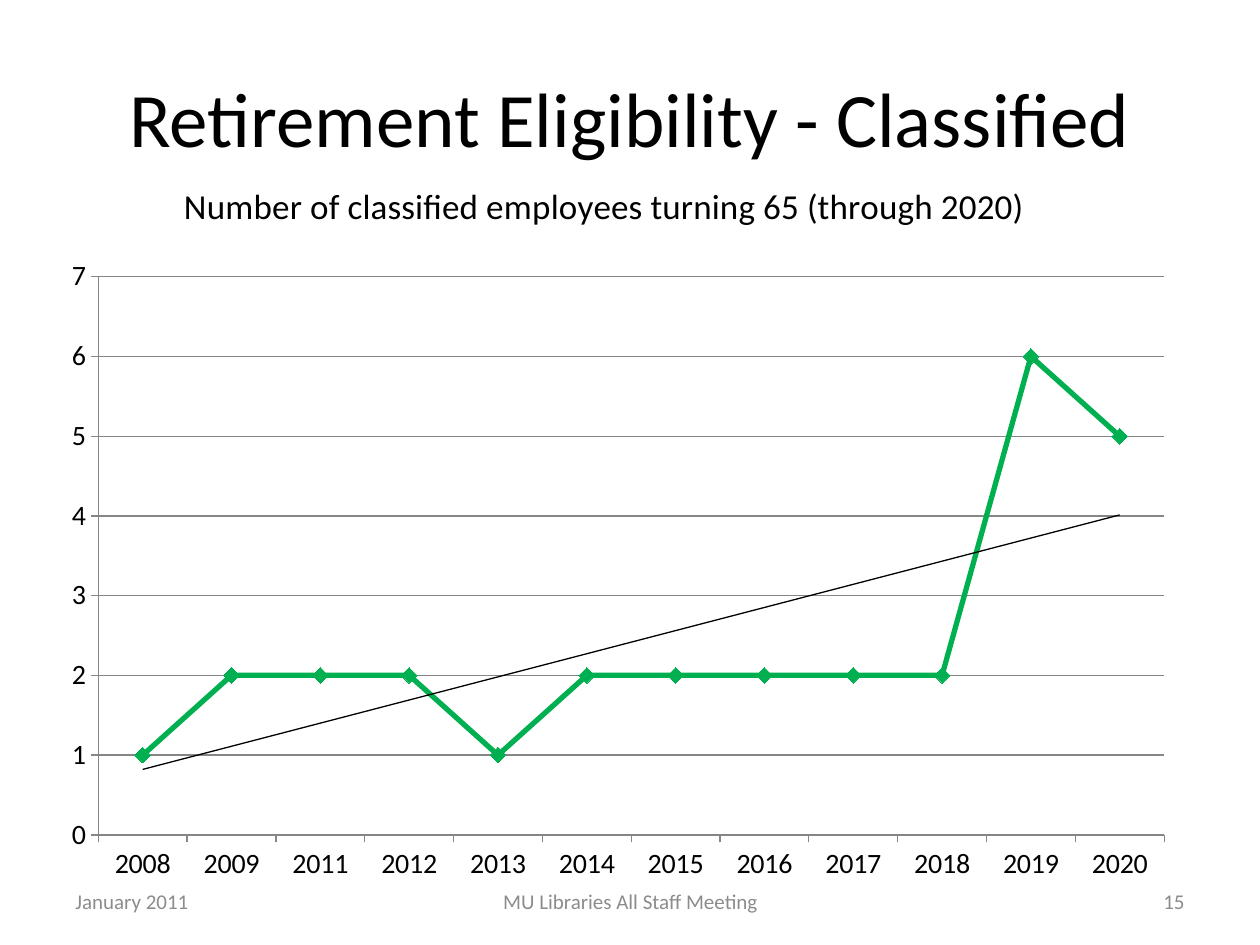
import pptx
import pptx.util
import pptx.dml.color
import pptx.chart.data
import pptx.enum.chart
import pptx.enum.text
import pptx.oxml
import pptx.oxml.ns

SCALE = 914400 / 126  # EMU per px
FONT = "Calibri"
HUES = {"text": "000000", "foot": "8C8C8C", "grid": "868686", "line": "00B050"}
YEARS = ["2008"] + [str(year) for year in range(2011 - 2, 2021) if year != 2010]
COUNTS = [1, 2, 2, 2, 1, 2, 2, 2, 2, 2, 6, 5]
ALIGN = pptx.enum.text.PP_ALIGN
MIDDLE = pptx.enum.text.MSO_ANCHOR.MIDDLE
qn = pptx.oxml.ns.qn


def px(*sizes):
    return [pptx.util.Emu(round(size * SCALE)) for size in sizes]


def hue(name):
    return pptx.dml.color.RGBColor.from_string(HUES[name])


def style(font, size, color):
    font.name, font.size, font.bold = FONT, pptx.util.Pt(size), False
    font.color.rgb = hue(color)


def write(frame, text, size, color, align):
    frame.text = text
    frame.word_wrap = True
    frame.vertical_anchor = MIDDLE
    para = frame.paragraphs[0]
    para.alignment = align
    style(para.runs[0].font, size, color)


def add_title(slide, text):
    title = slide.shapes.title
    title.left, title.top, title.width, title.height = px(63, 38, 1134, 157)
    write(title.text_frame, text, 44, "text", ALIGN.CENTER)


def add_foot(slide, text, left, width, align):
    box = slide.shapes.add_textbox(*px(left, 876, width, 50))
    write(box.text_frame, text, 12, "foot", align)


def make_xml(body):
    space = pptx.oxml.ns.nsdecls("c", "a")
    return pptx.oxml.parse_xml(body.replace(">", f" {space}>", 1))


def place(parent, index, inner="", **spots):
    """Give a chart part a manual layout in fractions of the chart."""
    for old in parent.findall(qn("c:layout")):
        parent.remove(old)
    modes = "".join(f'<c:{key}Mode val="edge"/>' for key in "xy")
    sizes = "".join(f'<c:{key} val="{val}"/>' for key, val in spots.items())
    parent.insert(index, make_xml(
        f"<c:layout><c:manualLayout>{inner}{modes}{sizes}"
        "</c:manualLayout></c:layout>"))


def add_trend(series):
    trend = make_xml(
        '<c:trendline><c:spPr><a:ln w="9525"><a:solidFill>'
        f'<a:srgbClr val="{HUES["text"]}"/></a:solidFill></a:ln></c:spPr>'
        '<c:trendlineType val="linear"/><c:dispRSqr val="0"/>'
        '<c:dispEq val="0"/></c:trendline>')
    series._element.find(qn("c:cat")).addprevious(trend)


def set_axis(axis):
    style(axis.tick_labels.font, 16, "text")
    axis.major_tick_mark = pptx.enum.chart.XL_TICK_MARK.OUTSIDE
    axis.format.line.color.rgb = hue("grid")


def set_line(series):
    series.smooth = False
    series.format.line.color.rgb = hue("line")
    series.format.line.width = pptx.util.Pt(3)
    marker = series.marker
    marker.style = pptx.enum.chart.XL_MARKER_STYLE.DIAMOND
    marker.size = 9
    marker.format.fill.solid()
    marker.format.fill.fore_color.rgb = hue("line")
    marker.format.line.color.rgb = hue("line")


def add_chart(slide, title):
    data = pptx.chart.data.CategoryChartData()
    data.categories = YEARS
    data.add_series("Series 1", COUNTS)
    kind = pptx.enum.chart.XL_CHART_TYPE.LINE_MARKERS
    chart = slide.shapes.add_chart(kind, *px(53, 168, 1134, 725), data).chart
    style(chart.font, 10, "text")
    chart.has_legend = False
    chart.plots[0].vary_by_categories = False

    # Chart title
    chart.has_title = True
    frame = chart.chart_title.text_frame
    frame.text = title
    style(frame.paragraphs[0].runs[0].font, 20, "text")

    # Axes
    value = chart.value_axis
    for axis in (chart.category_axis, value):
        set_axis(axis)
    value.minimum_scale, value.maximum_scale, value.major_unit = 0, 7, 1
    value.has_major_gridlines = True
    value.major_gridlines.format.line.color.rgb = hue("grid")

    # Line and trend
    series = chart.plots[0].series[0]
    set_line(series)
    add_trend(series)

    # Positions inside the chart
    root = chart._chartSpace.find(qn("c:chart"))
    place(root.find(qn("c:title")), 1, x=0.11, y=0.01)
    place(root.find(qn("c:plotArea")), 0, '<c:layoutTarget val="inner"/>',
          x=0.04, y=0.15, w=0.94, h=0.77)


def main():
    deck = pptx.Presentation()
    deck.slide_width, deck.slide_height = px(1260, 945)
    slide = deck.slides.add_slide(deck.slide_layouts[5])
    add_title(slide, "Retirement Eligibility - Classified")
    add_chart(slide, "Number of classified employees turning 65 (through 2020)")
    # Footer row
    add_foot(slide, "15", 903, 294, ALIGN.RIGHT)
    add_foot(slide, "January 2011", 63, 294, ALIGN.LEFT)
    add_foot(slide, "MU Libraries All Staff Meeting", 431, 399, ALIGN.CENTER)
    deck.save("out.pptx")


if __name__ == "__main__":
    main()
